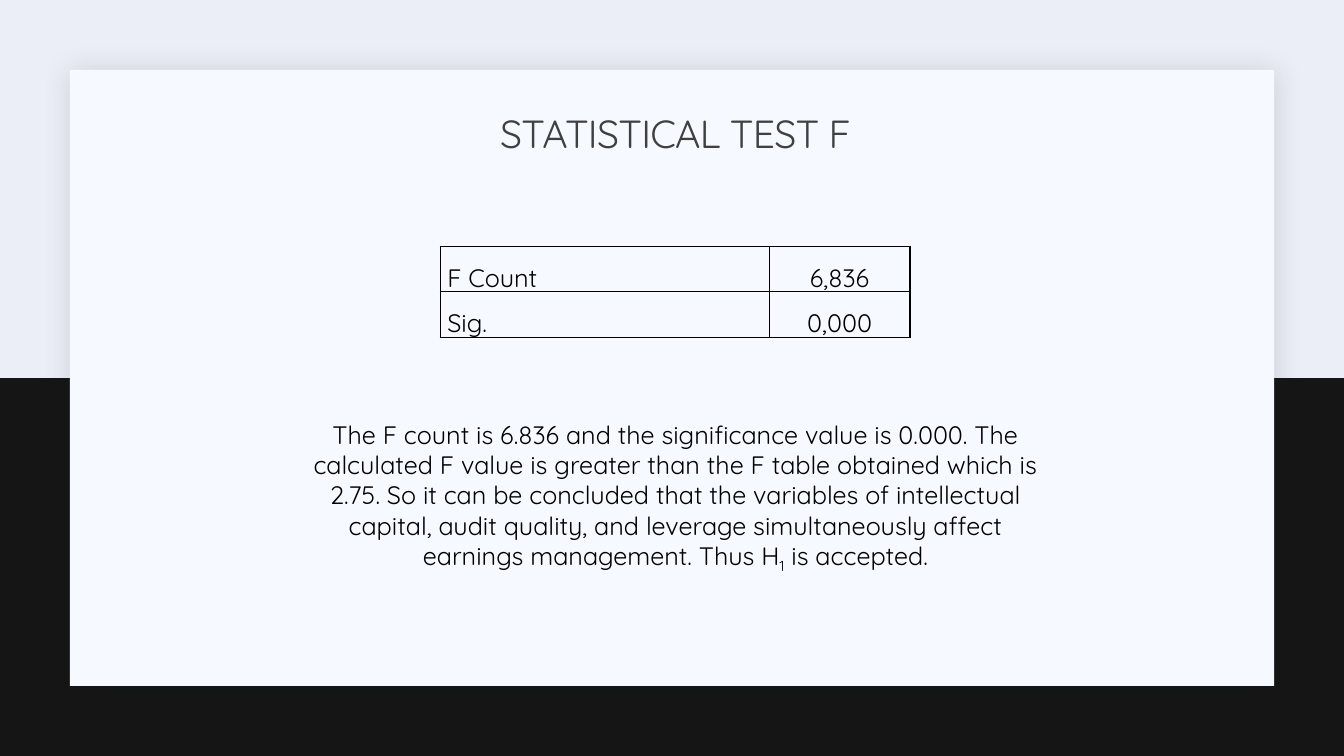
from dataclasses import dataclass

from lxml import etree
from pptx import Presentation
from pptx import util as u
from pptx.dml.color import RGBColor
from pptx.enum import shapes, text
from pptx.oxml import ns

SLIDE_WIDTH = u.Inches(13.333)
SLIDE_HEIGHT = u.Inches(7.5)


@dataclass(frozen=True)
class Theme:
    backdrop: str = "ECEEF7"
    band: str = "141514"
    card: str = "F6F9FF"
    shadow: str = "1F2125"
    heading: str = "404040"
    ink: str = "000000"
    font: str = "Quicksand"
    heading_size: int = 28
    body_size: int = 18


@dataclass(frozen=True)
class Area:
    """A rectangle in percent of the slide's width and height."""
    left: float
    top: float
    width: float
    height: float

    def lengths(self) -> tuple[int, int, int, int]:
        return (across(self.left), down(self.top),
                across(self.width), down(self.height))


@dataclass(frozen=True)
class Panel:
    area: Area
    colour: str


@dataclass(frozen=True)
class TextBlock:
    area: Area
    phrases: tuple[str, ...]  # every second phrase is a subscript
    size: int
    colour: str
    anchor: text.MSO_ANCHOR = text.MSO_ANCHOR.TOP
    line_spacing: float = 1.0
    tracking: int = 0  # hundredths of a point


@dataclass(frozen=True)
class Column:
    share: float
    align: text.PP_ALIGN


THEME = Theme()
BAND = Panel(Area(0, 50, 100, 50), THEME.band)
CARD = Panel(Area(5.2, 9.26, 89.6, 81.48), THEME.card)
HEADING = TextBlock(Area(9, 13.73, 82.5, 8.53), ("STATISTICAL TEST F",),
                    THEME.heading_size, THEME.heading,
                    text.MSO_ANCHOR.MIDDLE, 0.9, -50)
CONCLUSION = TextBlock(
    Area(21.68, 54.8, 57.15, 25.6),
    ("The F count is 6.836 and the significance value is 0.000. "
     "The calculated F value is greater than the F table obtained which is 2.75. "
     "So it can be concluded that the variables of intellectual capital, "
     "audit quality, and leverage simultaneously affect earnings management. "
     "Thus H", "1", " is accepted."),
    THEME.body_size, THEME.ink)
TABLE_AREA = Area(32.76, 32.6, 34.96, 12)
COLUMNS = (Column(0.7, text.PP_ALIGN.JUSTIFY), Column(0.3, text.PP_ALIGN.CENTER))
RESULTS = (("F Count", "6,836"), ("Sig.", "0,000"))


def across(percent: float) -> int:
    return round(SLIDE_WIDTH * percent / 100)


def down(percent: float) -> int:
    return round(SLIDE_HEIGHT * percent / 100)


def add_child(parent, tag: str, **attributes):
    child = etree.SubElement(parent, ns.qn(tag))
    for name, value in attributes.items():
        child.set(name, str(value))
    return child


def style_span(span, size: int, colour: str) -> None:
    span.font.name = THEME.font
    span.font.size = u.Pt(size)
    span.font.color.rgb = RGBColor.from_string(colour)


def add_panel(page, panel: Panel):
    box = page.shapes.add_shape(shapes.MSO_SHAPE.RECTANGLE, *panel.area.lengths())
    box.shadow.inherit = False
    box.fill.solid()
    box.fill.fore_color.rgb = RGBColor.from_string(panel.colour)
    box.line.fill.background()
    return box


def add_soft_shadow(box) -> None:
    effects = box._element.spPr.find(ns.qn("a:effectLst"))
    shadow = add_child(effects, "a:outerShdw", blurRad=u.Pt(20), dist=u.Pt(2),
                       dir=45 * 60000, algn="ctr", rotWithShape=0)
    colour = add_child(shadow, "a:srgbClr", val=THEME.shadow)
    add_child(colour, "a:alpha", val=15000)


def add_text(page, block: TextBlock) -> None:
    frame = page.shapes.add_textbox(*block.area.lengths()).text_frame
    frame.word_wrap = True
    frame.vertical_anchor = block.anchor
    para = frame.paragraphs[0]
    para.alignment = text.PP_ALIGN.CENTER
    para.line_spacing = block.line_spacing
    for index, phrase in enumerate(block.phrases):
        span = para.add_run()
        span.text = phrase
        style_span(span, block.size, block.colour)
        properties = span._r.get_or_add_rPr()
        if block.tracking:
            properties.set("spc", str(block.tracking))
        if index % 2:
            properties.set("baseline", "-25000")


def add_borders(cell) -> None:
    properties = cell._tc.get_or_add_tcPr()
    for position, side in enumerate(("a:lnL", "a:lnR", "a:lnT", "a:lnB")):
        line = etree.Element(ns.qn(side), w=str(u.Pt(1)))
        fill = add_child(line, "a:solidFill")
        add_child(fill, "a:srgbClr", val=THEME.ink)
        properties.insert(position, line)


def fill_cell(cell, value: str, align: text.PP_ALIGN) -> None:
    cell.fill.background()
    cell.margin_left = cell.margin_right = u.Inches(0.07)
    cell.margin_top = cell.margin_bottom = 0
    cell.text = value
    para = cell.text_frame.paragraphs[0]
    para.alignment = align
    para.line_spacing = 1.5
    style_span(para.runs[0], THEME.body_size, THEME.ink)
    add_borders(cell)


def add_results(page) -> None:
    table = page.shapes.add_table(len(RESULTS), len(COLUMNS),
                                  *TABLE_AREA.lengths()).table
    table.first_row = table.horz_banding = False
    for index, column in enumerate(COLUMNS):
        table.columns[index].width = across(TABLE_AREA.width * column.share)
    for row, values in enumerate(RESULTS):
        for index, (column, value) in enumerate(zip(COLUMNS, values)):
            fill_cell(table.cell(row, index), value, column.align)


def main() -> None:
    deck = Presentation()
    deck.slide_width, deck.slide_height = SLIDE_WIDTH, SLIDE_HEIGHT
    page = deck.slides.add_slide(deck.slide_layouts[6])
    page.background.fill.solid()
    page.background.fill.fore_color.rgb = RGBColor.from_string(THEME.backdrop)
    add_panel(page, BAND)
    add_soft_shadow(add_panel(page, CARD))
    add_text(page, HEADING)
    add_text(page, CONCLUSION)
    add_results(page)
    deck.save("out.pptx")


if __name__ == "__main__":
    main()
